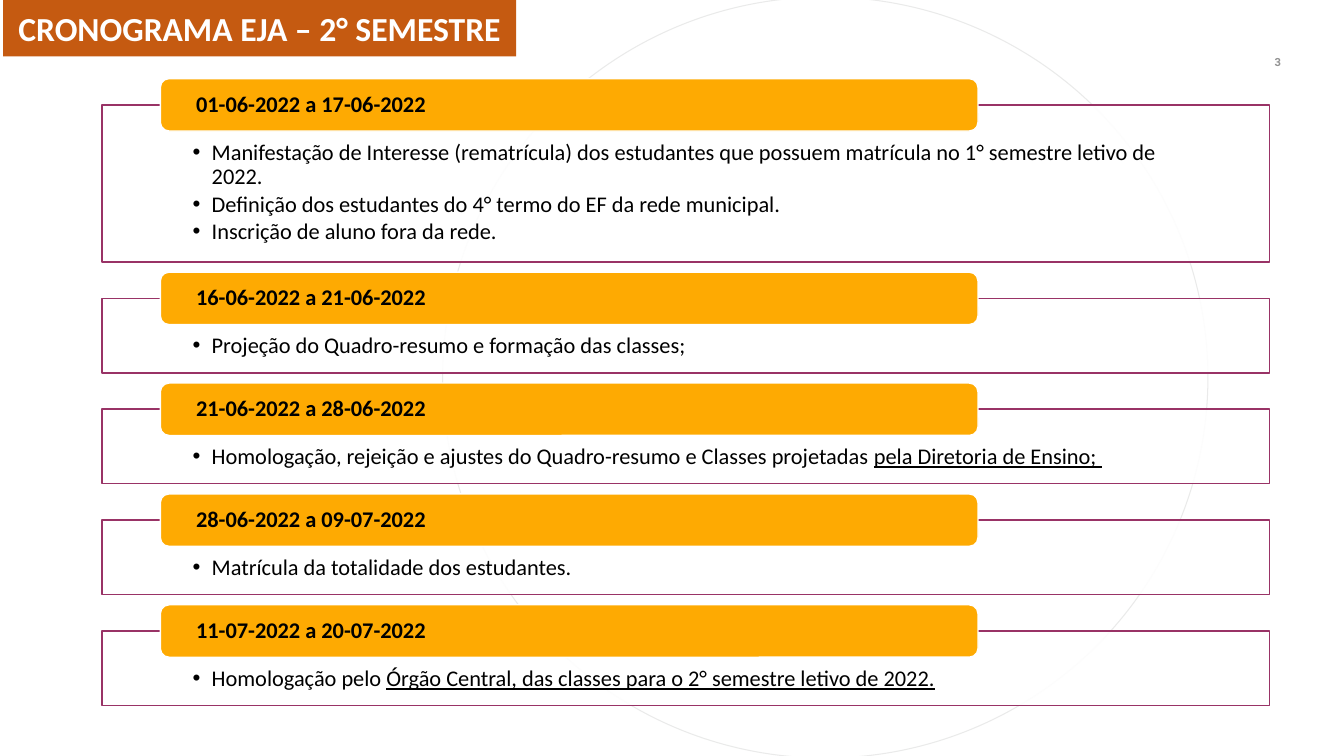
from pptx import Presentation
from pptx.dml.color import RGBColor
from pptx.enum.shapes import MSO_SHAPE as SHAPE
from pptx.enum.text import MSO_ANCHOR as ANCHOR, MSO_AUTO_SIZE as AUTOSIZE, PP_ALIGN as ALIGN
from pptx.oxml.ns import qn
from pptx.util import Inches, Pt
from lxml.etree import SubElement

# Content: each period has a date range and its bullets; a bullet is (plain, underlined)
TITLE = "CRONOGRAMA EJA – 2° SEMESTRE"
PAGE_NUMBER = "3"
PERIODS = [
    ("01-06-2022 a 17-06-2022", [
        ("Manifestação de Interesse (rematrícula) dos estudantes que possuem "
         "matrícula no 1° semestre letivo de 2022.", ""),
        ("Definição dos estudantes do 4° termo do EF da rede municipal.", ""),
        ("Inscrição de aluno fora da rede.", ""),
    ]),
    ("16-06-2022 a 21-06-2022", [
        ("Projeção do Quadro-resumo e formação das classes;", ""),
    ]),
    ("21-06-2022 a 28-06-2022", [
        ("Homologação, rejeição e ajustes do Quadro-resumo e Classes projetadas ",
         "pela Diretoria de Ensino; "),
    ]),
    ("28-06-2022 a 09-07-2022", [
        ("Matrícula da totalidade dos estudantes.", ""),
    ]),
    ("11-07-2022 a 20-07-2022", [
        ("Homologação pelo ",
         "Órgão Central, das classes para o 2° semestre letivo de 2022."),
    ]),
]

WHITE = RGBColor(0xFF, 0xFF, 0xFF)
BLACK = RGBColor(0, 0, 0)
ORANGE = RGBColor(0xC5, 0x5A, 0x11)
AMBER = RGBColor(0xFE, 0xAA, 0x02)
PLUM = RGBColor(0x99, 0x33, 0x66)
GREY = RGBColor(0x92, 0x92, 0x92)
PALE_GREY = RGBColor(0xBA, 0xBB, 0xBA)

# Layout, in inches
FIRST_TOP = 0.78
LABEL_HEIGHT = 0.52
OVERLAP = LABEL_HEIGHT / 2
GAP = 0.1
SHORT_BOX, TALL_BOX = 0.74, 1.56


def add_shape(kind, left, top, width, height, fill, line, points):
    shape = page.shapes.add_shape(
        kind, Inches(left), Inches(top), Inches(width), Inches(height))
    shape.shadow.inherit = False
    if fill is None:
        shape.fill.background()
    else:
        shape.fill.solid()
        shape.fill.fore_color.rgb = fill
    shape.line.color.rgb = line
    shape.line.width = Pt(points)
    return shape


def set_opacity(parent, percent):
    color = next(parent.iter(qn("a:srgbClr")))
    SubElement(color, qn("a:alpha"), val=str(percent * 1000))


def set_frame(frame, anchor, left=0, top=0, right=0, bottom=0):
    frame.word_wrap = True
    frame.vertical_anchor = anchor
    frame.margin_left, frame.margin_right = Inches(left), Inches(right)
    frame.margin_top, frame.margin_bottom = Inches(top), Inches(bottom)


def style(span, size, color, bold=False, name="Calibri"):
    span.font.name = name
    span.font.size = Pt(size)
    span.font.bold = bold
    span.font.color.rgb = color


def add_bullet(para, plain, underlined):
    para.alignment = ALIGN.LEFT
    para.line_spacing = 0.9
    para.space_after = Pt(2.4)
    properties = para._p.get_or_add_pPr()
    properties.set("marL", str(Inches(0.19)))
    properties.set("indent", str(Inches(-0.19)))
    SubElement(properties, qn("a:buFont"), typeface="Arial")
    SubElement(properties, qn("a:buChar"), char="•")
    for text, underline in ((plain, False), (underlined, True)):
        if text:
            span = para.add_run()
            span.text = text
            style(span, 16, BLACK)
            span.font.underline = underline


def add_period(top, height, dates, bullets):
    box = add_shape(SHAPE.RECTANGLE, 1.01, top + OVERLAP, 11.58, height, WHITE, PLUM, 1)
    set_opacity(box._element.spPr.find(qn("a:solidFill")), 90)
    frame = box.text_frame
    set_frame(frame, ANCHOR.TOP, 0.9, 0.36, 0.9, 0.12)
    for number, (plain, underlined) in enumerate(bullets):
        para = frame.add_paragraph() if number else frame.paragraphs[0]
        add_bullet(para, plain, underlined)

    label = add_shape(SHAPE.ROUNDED_RECTANGLE, 1.59, top, 8.11, LABEL_HEIGHT, AMBER, WHITE, 1)
    set_frame(label.text_frame, ANCHOR.MIDDLE, 0.33, 0, 0.33, 0)
    label.text_frame.text = dates
    para = label.text_frame.paragraphs[0]
    para.alignment = ALIGN.LEFT
    para.line_spacing = 0.9
    style(para.runs[0], 16, BLACK, bold=True)


deck = Presentation()
deck.slide_width, deck.slide_height = Inches(13.33), Inches(7.5)
page = deck.slides.add_slide(deck.slide_layouts[5])

# Title on a rounded band
title = page.shapes.title
title.left, title.top = Inches(0.03), Inches(0)
title.width, title.height = Inches(5.09), Inches(0.56)
geometry = SubElement(title._element.spPr, qn("a:prstGeom"), prst="roundRect")
SubElement(geometry, qn("a:avLst"))
title.fill.solid()
title.fill.fore_color.rgb = ORANGE
title.text_frame.text = TITLE
set_frame(title.text_frame, ANCHOR.MIDDLE, 0.1, 0.05, 0.1, 0.05)
title.text_frame.word_wrap = False
title.text_frame.auto_size = AUTOSIZE.NONE
title.text_frame.paragraphs[0].alignment = ALIGN.CENTER
style(title.text_frame.paragraphs[0].runs[0], 24, WHITE, bold=True)

# Page number
number_box = page.shapes.add_textbox(Inches(12.52), Inches(0.55), Inches(0.31), Inches(0.13))
set_frame(number_box.text_frame, ANCHOR.MIDDLE)
number_box.text_frame.text = PAGE_NUMBER
number_box.text_frame.paragraphs[0].alignment = ALIGN.CENTER
style(number_box.text_frame.paragraphs[0].runs[0], 8, GREY, bold=True, name="Roboto")

# Background ring
ring = add_shape(SHAPE.OVAL, 4.39, -0.03, 7.59, 7.55, None, PALE_GREY, 0.75)
set_opacity(ring._element.spPr.find(qn("a:ln")), 30)

# Periods, stacked with equal gaps
top = FIRST_TOP
for dates, bullets in PERIODS:
    height = TALL_BOX if len(bullets) > 1 else SHORT_BOX
    add_period(top, height, dates, bullets)
    top += OVERLAP + height + GAP

deck.save("out.pptx")
